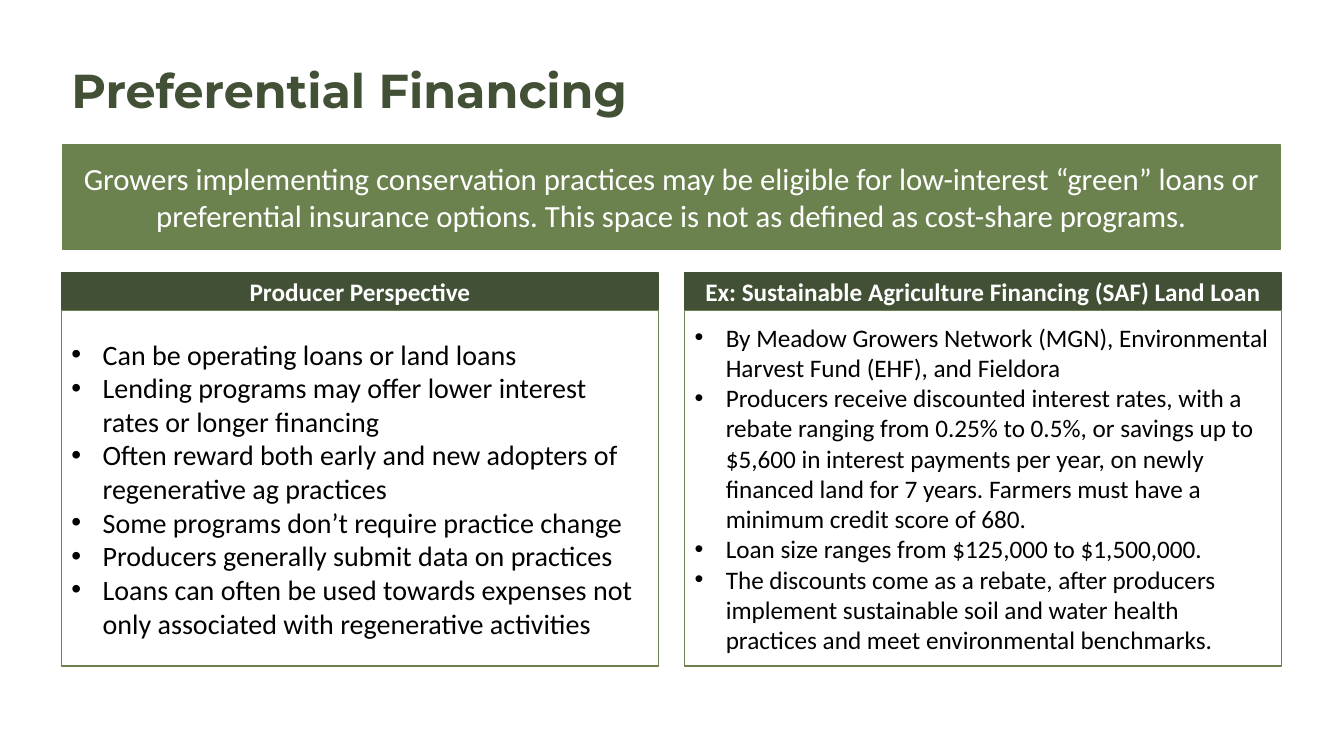
from lxml import etree
from pptx import Presentation
from pptx import util as u
from pptx.dml.color import RGBColor
from pptx.enum import shapes, text
from pptx.oxml import ns

PX = 9144
DARK_GREEN = RGBColor(0x42, 0x50, 0x35)
GREEN = RGBColor(0x6B, 0x81, 0x4E)
WHITE = RGBColor(0xFF, 0xFF, 0xFF)
BLACK = RGBColor(0, 0, 0)

COLUMN_WIDTH = 592
BULLET_INDENT = 31
HEADING_TOP, HEADING_HEIGHT = 271, 36
BODY_TOP, BODY_HEIGHT = 308, 353

PANELS = [
    (61, "Producer Perspective", 20, [
        "Can be operating loans or land loans",
        "Lending programs may offer lower interest rates or longer financing",
        "Often reward both early and new adopters of regenerative ag practices",
        "Some programs don’t require practice change",
        "Producers generally submit data on practices",
        "Loans can often be used towards expenses not only associated with "
        "regenerative activities",
    ]),
    (679, "Ex: Sustainable Agriculture Financing (SAF) Land Loan", 18, [
        "By Meadow Growers Network (MGN), Environmental Harvest Fund (EHF), "
        "and Fieldora",
        "Producers receive discounted interest rates, with a rebate ranging "
        "from 0.25% to 0.5%, or savings up to $5,600 in interest payments per "
        "year, on newly financed land for 7 years. Farmers must have a minimum "
        "credit score of 680.",
        "Loan size ranges from $125,000 to $1,500,000.",
        "The discounts come as a rebate, after producers implement sustainable "
        "soil and water health practices and meet environmental benchmarks.",
    ]),
]


def px(length):
    """Turn a length in px into EMU."""
    return u.Emu(length * PX)


def add_bullet(paragraph):
    """Give a paragraph a round bullet with a hanging indent."""
    properties = paragraph._p.get_or_add_pPr()
    properties.set("marL", str(px(BULLET_INDENT)))
    properties.set("indent", str(-px(BULLET_INDENT)))
    font = etree.SubElement(properties, ns.qn("a:buFont"))
    font.set("typeface", "Arial")
    bullet = etree.SubElement(properties, ns.qn("a:buChar"))
    bullet.set("char", "•")


def write(holder, lines, size, color, font="Calibri", bold=False,
          align=text.PP_ALIGN.LEFT, bullets=False, spacing=None):
    """Write lines as vertically centred paragraphs in one format."""
    frame = holder.text_frame
    frame.word_wrap = True
    frame.vertical_anchor = text.MSO_ANCHOR.MIDDLE
    for index, line in enumerate(lines):
        paragraph = frame.add_paragraph() if index else frame.paragraphs[0]
        paragraph.alignment = align
        if spacing:
            paragraph.line_spacing = spacing
        if bullets:
            add_bullet(paragraph)
        run = paragraph.add_run()
        run.text = line
        run.font.name = font
        run.font.size = u.Pt(size)
        run.font.bold = bold
        run.font.color.rgb = color


def add_box(slide, left, top, width, height, fill, line):
    """Add a plain rectangle with a thin outline."""
    box = slide.shapes.add_shape(shapes.MSO_SHAPE.RECTANGLE, px(left), px(top),
                                 px(width), px(height))
    box.shadow.inherit = False
    box.fill.solid()
    box.fill.fore_color.rgb = fill
    box.line.color.rgb = line
    box.line.width = u.Pt(1)
    return box


def add_title(slide, title):
    """Add the slide title."""
    heading = slide.shapes.add_textbox(px(61), px(40), px(1140), px(104))
    write(heading, [title], 34, DARK_GREEN, font="Montserrat", bold=True, spacing=0.9)


def add_panel(slide, left, heading, size, points):
    """Add a bulleted panel under its dark heading bar."""
    body = add_box(slide, left, BODY_TOP, COLUMN_WIDTH, BODY_HEIGHT, WHITE, GREEN)
    write(body, points, size, BLACK, bullets=True)
    bar = add_box(slide, left, HEADING_TOP, COLUMN_WIDTH, HEADING_HEIGHT,
                  DARK_GREEN, DARK_GREEN)
    write(bar, [heading], 18, WHITE, bold=True, align=text.PP_ALIGN.CENTER)


def main():
    """Build the financing slide and save it."""
    deck = Presentation()
    deck.slide_width, deck.slide_height = px(1333), px(750)
    slide = deck.slides.add_slide(deck.slide_layouts[6])
    add_title(slide, "Preferential Financing")
    summary = add_box(slide, 62, 144, 1208, 103, GREEN, GREEN)
    write(summary, ["Growers implementing conservation practices may be eligible for "
                    "low-interest “green” loans or preferential insurance options. "
                    "This space is not as defined as cost-share programs."],
          22, WHITE, align=text.PP_ALIGN.CENTER)
    for panel in PANELS:
        add_panel(slide, *panel)
    deck.save("out.pptx")


if __name__ == "__main__":
    main()
